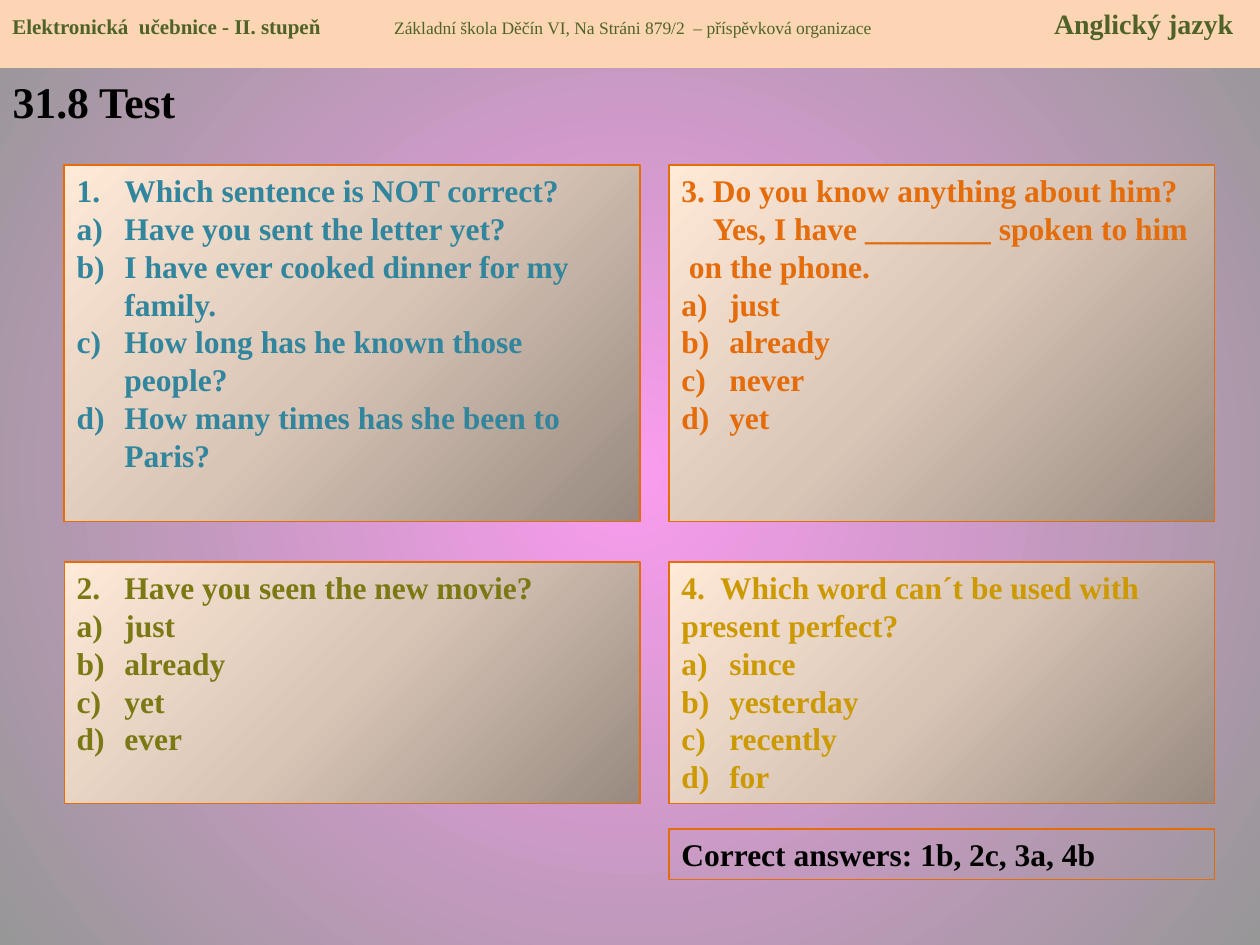
"""Build an English test slide with four question cards and an answer key."""
from dataclasses import dataclass

from lxml import etree
from pptx import Presentation
from pptx.dml.color import RGBColor
from pptx.enum.shapes import MSO_SHAPE
from pptx.enum.text import MSO_ANCHOR, MSO_AUTO_SIZE, PP_ALIGN
from pptx.oxml import parse_xml
from pptx.oxml.ns import qn
from pptx.util import Inches, Pt

RECT = MSO_SHAPE.RECTANGLE
TOP = MSO_ANCHOR.TOP
FIXED = MSO_AUTO_SIZE.NONE
LEFT = PP_ALIGN.LEFT
FONT = "Times New Roman"
NS = "http://schemas.openxmlformats.org/drawingml/2006/main"

BLACK = RGBColor(0x00, 0x00, 0x00)
PEACH = RGBColor(0xFC, 0xD5, 0xB5)
GREEN = RGBColor(0x4F, 0x62, 0x28)
ORANGE = RGBColor(0xE4, 0x6C, 0x0A)
TEAL = RGBColor(0x31, 0x85, 0x9C)
OLIVE = RGBColor(0x7B, 0x79, 0x13)
GOLD = RGBColor(0xCC, 0x99, 0x00)
PINK = RGBColor(0xFA, 0x9C, 0xEF)
GREY = RGBColor(0x97, 0x97, 0x97)
TAUPE = RGBColor(0x98, 0x8A, 0x80)
SAND = RGBColor(0xD8, 0xC5, 0xB6)
CREAM = RGBColor(0xFF, 0xEA, 0xD8)

WIDE, HIGH, BAND = 10, 7.5, 0.54
COLS = ((0.51, 4.57), (5.31, 4.33))
ROWS = ((1.31, 2.83), (4.46, 1.92), (6.58, 0.4))
HANG = 0.38


@dataclass
class Line:
    """One paragraph with its indents and optional numbering."""
    text: str
    left: float = 0
    first: float = 0
    style: str = ""
    start: int = 1


@dataclass
class Card:
    """One bordered box at a grid cell."""
    col: int
    row: int
    color: RGBColor
    lines: list[Line]
    edge: float = 0.75
    shaded: bool = True


def ask(text: str, start: int) -> Line:
    """Return a numbered question."""
    return Line(text, HANG, -HANG, "arabicPeriod", start)


def picks(*texts: str) -> list[Line]:
    """Return lettered answers."""
    return [Line(text, HANG, -HANG, "alphaLcParenR") for text in texts]


CARDS = (
    Card(0, 0, TEAL, [ask("Which sentence is NOT correct?", 1), *picks(
        "Have you sent the letter yet?",
        "I have ever cooked dinner for my family.",
        "How long has he known those people?",
        "How many times has she been to Paris?")], edge=1),
    Card(0, 1, OLIVE, [ask("Have you seen the new movie?", 2),
                       *picks("just", "already", "yet", "ever")]),
    Card(1, 0, ORANGE, [
        Line("3. Do you know anything about him?"),
        Line("Yes, I have ________ spoken to him on the phone.", 0.06, 0.19),
        *picks("just", "already", "never", "yet")]),
    Card(1, 1, GOLD, [
        Line("4.  Which word can´t be used with present perfect?"),
        *picks("since", "yesterday", "recently", "for")]),
    Card(1, 2, BLACK, [Line("Correct answers: 1b, 2c, 3a, 4b")], shaded=False),
)


def write(para, text: str, *, size: float, color: RGBColor, bold: bool = True) -> None:
    """Add a formatted run to a paragraph."""
    run = para.add_run()
    run.text = text
    font = run.font
    font.name, font.size, font.bold = FONT, Pt(size), bold
    font.color.rgb = color


def shade(root, colors: tuple, focus: tuple) -> None:
    """Turn the gradient below root into a radial one."""
    step = 100000 // (len(colors) - 1)
    stops = "".join(f'<a:gs pos="{i * step}"><a:srgbClr val="{color}"/></a:gs>'
                    for i, color in enumerate(colors))
    rect = " ".join(f'{side}="{share * 1000}"' for side, share in zip("ltrb", focus))
    old = next(root.iter(qn("a:gradFill")))
    old.getparent().replace(old, parse_xml(
        f'<a:gradFill xmlns:a="{NS}" rotWithShape="1"><a:gsLst>{stops}</a:gsLst>'
        f'<a:path path="circle"><a:fillToRect {rect}/></a:path></a:gradFill>'))


def setup(frame) -> None:
    """Set a text frame to wrap from its top left corner."""
    frame.word_wrap = True
    frame.auto_size = FIXED
    frame.vertical_anchor = TOP
    frame.paragraphs[0].alignment = LEFT


def add_box(slide, left: float, top: float, width: float, height: float):
    """Add a plain rectangle ready for text."""
    box = slide.shapes.add_shape(RECT, *map(Inches, (left, top, width, height)))
    box.shadow.inherit = False
    setup(box.text_frame)
    return box


def add_card(slide, card: Card) -> None:
    """Draw a card with its lines of text."""
    (left, width), (top, height) = COLS[card.col], ROWS[card.row]
    box = add_box(slide, left, top, width, height)
    if card.shaded:
        box.fill.gradient()
        shade(box.element, (TAUPE, SAND, CREAM), (100, 100, 0, 0))
    else:
        box.fill.background()
    box.line.color.rgb = ORANGE
    box.line.width = Pt(card.edge)
    frame = box.text_frame
    for i, line in enumerate(card.lines):
        para = frame.add_paragraph() if i else frame.paragraphs[0]
        para.alignment = LEFT
        props = para._p.get_or_add_pPr()
        props.set("marL", str(Inches(line.left)))
        props.set("indent", str(Inches(line.first)))
        if line.style:
            mark = etree.SubElement(props, qn("a:buAutoNum"), type=line.style)
            if line.start > 1:
                mark.set("startAt", str(line.start))
        write(para, line.text, size=18, color=card.color)


def add_band(slide) -> None:
    """Draw the top band with three texts set at tab stops."""
    band = add_box(slide, 0, 0, WIDE, BAND)
    band.fill.solid()
    band.fill.fore_color.rgb = PEACH
    band.line.fill.background()
    para = band.text_frame.paragraphs[0]
    tabs = etree.SubElement(para._p.get_or_add_pPr(), qn("a:tabLst"))
    for place, side in ((3.03, "l"), (9.69, "r")):
        etree.SubElement(tabs, qn("a:tab"), pos=str(Inches(place)), algn=side)
    write(para, "Elektronická  učebnice - II. stupeň\t", size=12, color=GREEN)
    write(para, "Základní škola Děčín VI, Na Stráni 879/2  – příspěvková organizace\t",
          size=10, color=GREEN, bold=False)
    write(para, "Anglický jazyk", size=16, color=GREEN)


def main() -> None:
    """Build and save the slide."""
    deck = Presentation()
    deck.slide_width, deck.slide_height = Inches(WIDE), Inches(HIGH)
    slide = deck.slides.add_slide(deck.slide_layouts[5])
    slide.background.fill.gradient()
    shade(slide.element, (PINK, GREY), (50, 50, 50, 50))
    title = slide.shapes.title
    title.left, title.top = Inches(0), Inches(BAND)
    title.width, title.height = Inches(WIDE), Inches(HIGH - BAND)
    setup(title.text_frame)
    write(title.text_frame.paragraphs[0], "31.8 Test", size=25, color=BLACK)
    add_band(slide)
    for card in CARDS:
        add_card(slide, card)
    deck.save("out.pptx")


if __name__ == "__main__":
    main()
